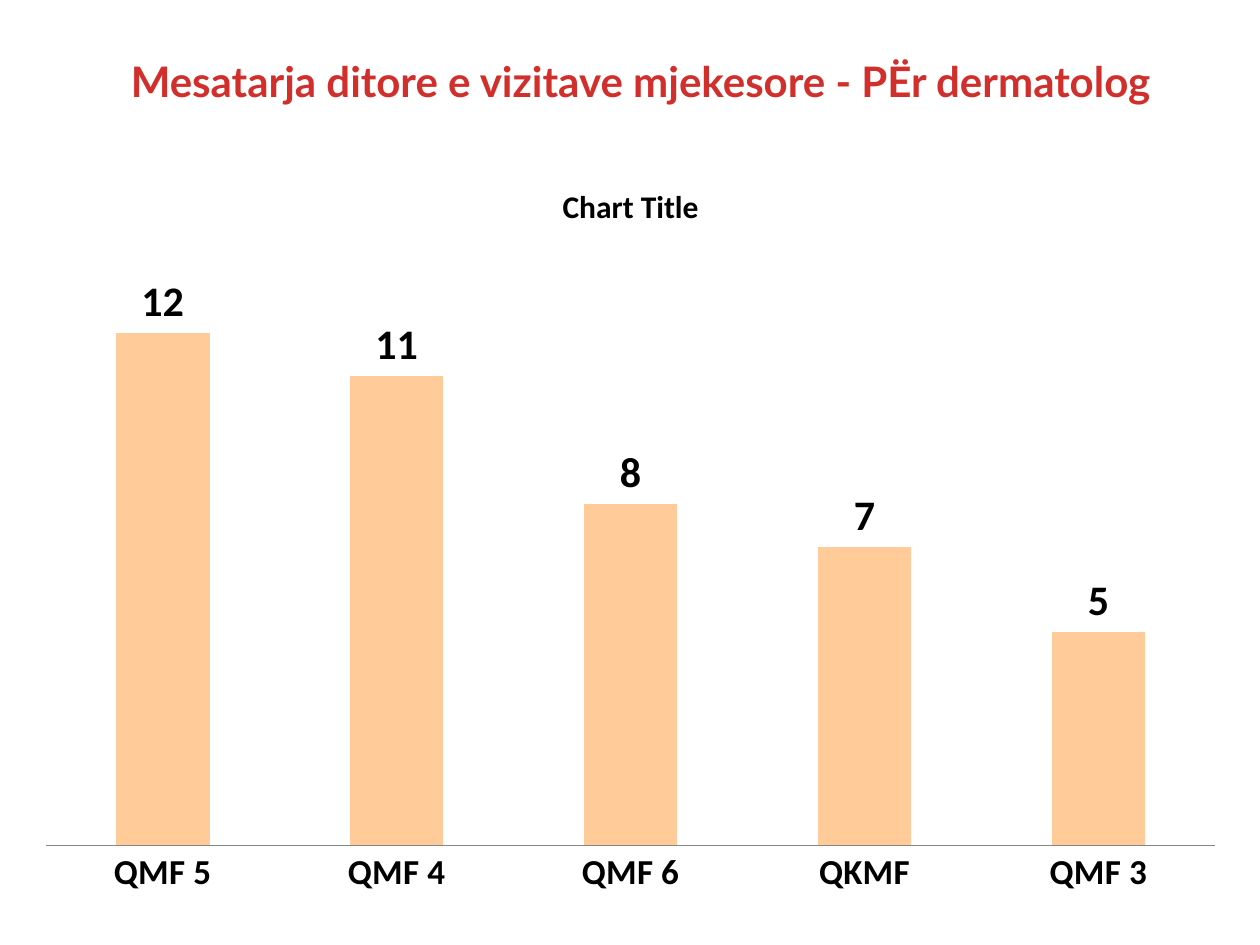
"""Build a slide with a title and a column chart of daily dermatology visits."""
from lxml import etree
from pptx import Presentation
from pptx.chart.data import CategoryChartData as Data
from pptx.dml.color import RGBColor as RGB
from pptx.enum.chart import XL_CHART_TYPE as Kind, XL_LABEL_POSITION as Pos
from pptx.enum.chart import XL_TICK_LABEL_POSITION as Tick, XL_TICK_MARK as Mark
from pptx.enum.text import MSO_ANCHOR as Anchor, PP_ALIGN as Align
from pptx.oxml.ns import qn
from pptx.util import Inches, Pt

TITLE = "Mesatarja ditore e vizitave mjekesore - PËr dermatolog"
HEAD = "Chart Title"
VISITS = {"QMF 5": 12, "QMF 4": 11, "QMF 6": 8, "QKMF": 7, "QMF 3": 5}
COLORS = {"title": "D02F2C", "bar": "FFCC99", "text": "000000", "axis": "868686"}
BOXES = {"title": (0.25, 0.17, 9.67, 0.94), "chart": (0.17, 1.25, 9.67, 6)}
PLOT = {"x": 0.02, "y": 0.12, "w": 0.96, "h": 0.79}


def style(font, size, color="text", face="Calibri", bold=True):
    font.size, font.name, font.bold = Pt(size), face, bold
    font.color.rgb = RGB.from_string(COLORS[color])


def write(frame, text, **form):
    para = frame.paragraphs[0]
    para.alignment = Align.CENTER
    run = para.add_run()
    run.text = text
    style(run.font, **form)


def place(chart):
    area = chart.plots[0]._element.getparent()
    for old in area.findall(qn("c:layout")):
        area.remove(old)
    layout = etree.Element(qn("c:layout"))
    area.insert(0, layout)
    manual = etree.SubElement(layout, qn("c:manualLayout"))
    rules = {"layoutTarget": "inner", "xMode": "edge", "yMode": "edge", **PLOT}
    for name, val in rules.items():
        etree.SubElement(manual, qn("c:" + name)).set("val", str(val))


def draw(slide):
    data = Data()
    data.categories = list(VISITS)
    data.add_series("Series 1", list(VISITS.values()))
    box = map(Inches, BOXES["chart"])
    chart = slide.shapes.add_chart(Kind.COLUMN_CLUSTERED, *box, data).chart
    style(chart.font, 10, bold=False)
    chart.has_legend = False
    chart.has_title = True
    write(chart.chart_title.text_frame, HEAD, size=18)

    base, scale = chart.category_axis, chart.value_axis
    base.major_tick_mark = base.minor_tick_mark = Mark.NONE
    base.tick_label_position = Tick.NEXT_TO_AXIS
    base.format.line.color.rgb = RGB.from_string(COLORS["axis"])
    style(base.tick_labels.font, 20)
    scale.minimum_scale, scale.maximum_scale = 0, 14
    scale.has_major_gridlines = False
    scale.visible = False

    plot = chart.plots[0]
    plot.gap_width, plot.vary_by_categories = 150, False
    fill = plot.series[0].format.fill
    fill.solid()
    fill.fore_color.rgb = RGB.from_string(COLORS["bar"])
    labels = plot.series[0].data_labels
    labels.show_value, labels.position = True, Pos.OUTSIDE_END
    style(labels.font, 24)
    place(chart)


def main():
    deck = Presentation()
    deck.slide_width, deck.slide_height = Inches(10), Inches(7.5)
    slide = deck.slides.add_slide(deck.slide_layouts[6])
    frame = slide.shapes.add_textbox(*map(Inches, BOXES["title"])).text_frame
    frame.word_wrap, frame.vertical_anchor = True, Anchor.MIDDLE
    write(frame, TITLE, size=24, color="title", face="Lato")
    draw(slide)
    deck.save("out.pptx")


if __name__ == "__main__":
    main()
